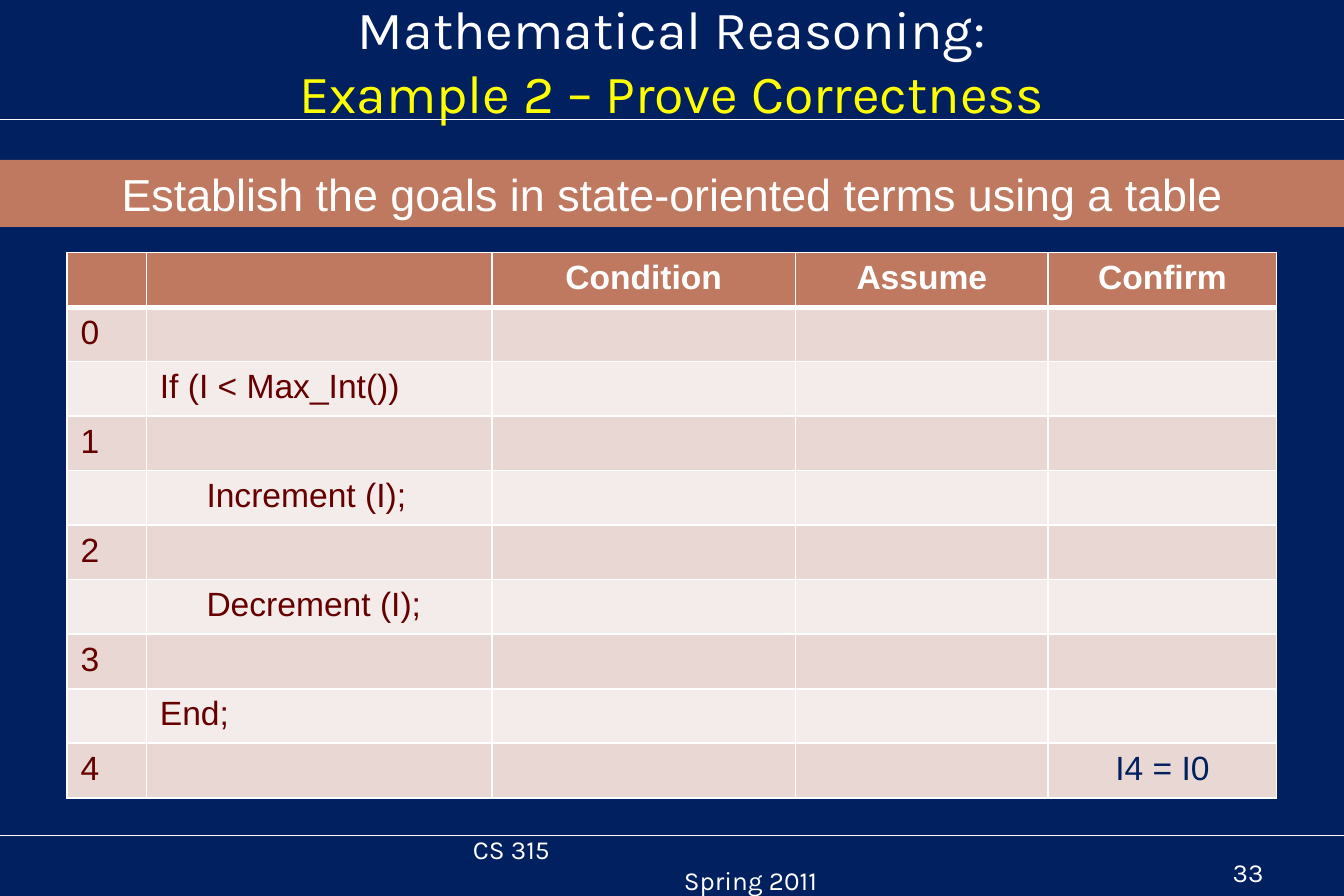
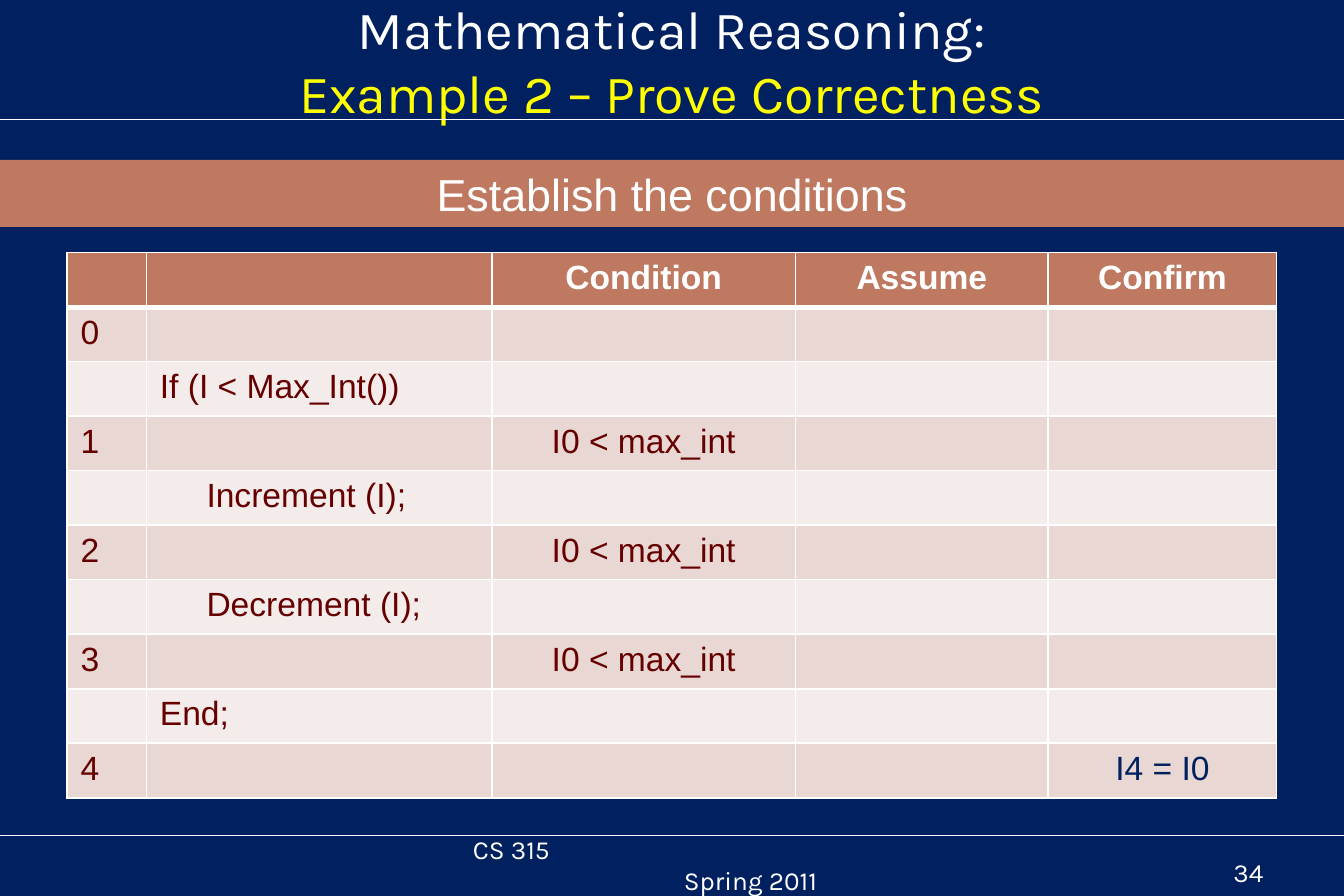
from lxml.etree import SubElement
from pptx import Presentation
from pptx.dml.color import RGBColor
from pptx.enum.shapes import MSO_CONNECTOR, MSO_SHAPE
from pptx.enum.text import MSO_ANCHOR, MSO_AUTO_SIZE, PP_ALIGN
from pptx.oxml.ns import qn
from pptx.util import Inches, Pt

# Content
TITLE = [("Mathematical Reasoning:", "FFFFFF"),
         ("Example 2 – Prove Correctness", "FFFF00")]
FOOTER = [("CS 315", 0), ("Spring 2011", 1.57)]  # text, indent
HEADER = ["", "", "Condition", "Assume", "Confirm"]
STATEMENTS = ["If (I < Max_Int())", "     Increment (I);",
              "     Decrement (I);", "End;"]
GOALS = {4: "I4 = I0"}  # state: text
SLIDES = [
    {"number": 33, "conditions": {},
     "band": "Establish the goals in state-oriented terms using a table"},
    {"number": 34, "conditions": dict.fromkeys((1, 2, 3), "I0 < max_int"),
     "band": "Establish the conditions"},
]

# Shared style
NAVY, WHITE, CLAY, MAROON = "002060", "FFFFFF", "BE7960", "660000"
STRIPES = ["F4ECEA", "E8D7D2"]
HEAD_FONT, BODY_FONT = "Karla", "Arial"
WIDTH, HEIGHT = 10, 6.67
RULES = [0.89, 6.22]
COLUMNS = [0.59, 2.57, 2.26, 1.88, 1.7]
TABLE_LEFT, TABLE_TOP, TABLE_HEIGHT = 0.5, 1.88, 4.06


def rgb(value):
    return RGBColor.from_string(value)


def box(left, top, width, height):
    return [Inches(v) for v in (left, top, width, height)]


def add_run(p, text, size, font, color, bold=False):
    r = p.add_run()
    r.text = text
    r.font.size, r.font.name, r.font.bold = Pt(size), font, bold
    r.font.color.rgb = rgb(color)


def add_rule(slide, y):
    line = slide.shapes.add_connector(
        MSO_CONNECTOR.STRAIGHT, 0, Inches(y), Inches(WIDTH), Inches(y))
    line.line.color.rgb = rgb(WHITE)
    line.line.width = Pt(0.75)
    SubElement(line._element.spPr, qn("a:effectLst"))


def add_title(slide):
    sp = slide.shapes.title
    sp.left, sp.top, sp.width, sp.height = box(0.5, 0.15, 9, 0.59)
    tf = sp.text_frame
    tf.auto_size = MSO_AUTO_SIZE.NONE
    tf.vertical_anchor = MSO_ANCHOR.MIDDLE
    p = tf.paragraphs[0]
    p.alignment = PP_ALIGN.CENTER
    for i, (text, color) in enumerate(TITLE):
        if i:
            p.add_line_break()
        add_run(p, text, 28.8, HEAD_FONT, color)


def add_band(slide, text):
    sp = slide.shapes.add_shape(MSO_SHAPE.RECTANGLE, *box(0, 1.19, WIDTH, 0.5))
    sp.shadow.inherit = False
    sp.fill.solid()
    sp.fill.fore_color.rgb = rgb(CLAY)
    sp.line.fill.background()
    p = sp.text_frame.paragraphs[0]
    p.alignment = PP_ALIGN.CENTER
    add_run(p, text, 24, BODY_FONT, WHITE)


def set_borders(cell, top, bottom):
    tcPr = cell._tc.get_or_add_tcPr()
    for side, width in (("L", 1), ("R", 1), ("T", top), ("B", bottom)):
        ln = SubElement(tcPr, qn(f"a:ln{side}"), w=str(Pt(width)))
        fill = SubElement(ln, qn("a:solidFill"))
        SubElement(fill, qn("a:srgbClr"), val=WHITE)


def table_rows(conditions):
    """Header, then states 0 to 4 with a statement between each pair."""
    rows = [HEADER]
    for state in range(len(STATEMENTS) + 1):
        rows.append([str(state), "", conditions.get(state, ""), "",
                     GOALS.get(state, "")])
        if state < len(STATEMENTS):
            rows.append(["", STATEMENTS[state], "", "", ""])
    return rows


def add_state_table(slide, rows):
    table = slide.shapes.add_table(
        len(rows), len(COLUMNS),
        *box(TABLE_LEFT, TABLE_TOP, sum(COLUMNS), TABLE_HEIGHT)).table
    table.horz_banding = False
    for column, width in zip(table.columns, COLUMNS):
        column.width = Inches(width)
    for i, row in enumerate(rows):
        table.rows[i].height = Inches(TABLE_HEIGHT / len(rows))
        head = i == 0
        for j, text in enumerate(row):
            cell = table.cell(i, j)
            set_borders(cell, 3 if i == 1 else 1, 3 if head else 1)
            cell.fill.solid()
            cell.fill.fore_color.rgb = rgb(CLAY if head else STRIPES[i % 2])
            p = cell.text_frame.paragraphs[0]
            p.font.size = Pt(18)
            if j >= 2:
                p.alignment = PP_ALIGN.CENTER
            if text:
                color = WHITE if head else NAVY if j == 4 else MAROON
                add_run(p, text, 18, BODY_FONT, color, head)


def bottom_text(slide, *place):
    tf = slide.shapes.add_textbox(*box(*place)).text_frame
    tf.word_wrap = True
    tf.vertical_anchor = MSO_ANCHOR.BOTTOM
    return tf


def add_footer(slide, number):
    tf = bottom_text(slide, 3.42, 6.2, 3.17, 0.52)
    for i, (text, indent) in enumerate(FOOTER):
        p = tf.add_paragraph() if i else tf.paragraphs[0]
        p._p.get_or_add_pPr().set("marL", str(Inches(indent)))
        add_run(p, text, 14, HEAD_FONT, WHITE)
    p = bottom_text(slide, 7.17, 6.2, 2.33, 0.46).paragraphs[0]
    p.alignment = PP_ALIGN.RIGHT
    add_run(p, str(number), 14, HEAD_FONT, WHITE)


def main():
    prs = Presentation()
    prs.slide_width, prs.slide_height = Inches(WIDTH), Inches(HEIGHT)
    background = prs.slide_master.background.fill
    background.solid()
    background.fore_color.rgb = rgb(NAVY)
    for content in SLIDES:
        slide = prs.slides.add_slide(prs.slide_layouts[5])
        for y in RULES:
            add_rule(slide, y)
        add_title(slide)
        add_state_table(slide, table_rows(content["conditions"]))
        add_footer(slide, content["number"])
        add_band(slide, content["band"])
    prs.save("out.pptx")


if __name__ == "__main__":
    main()
